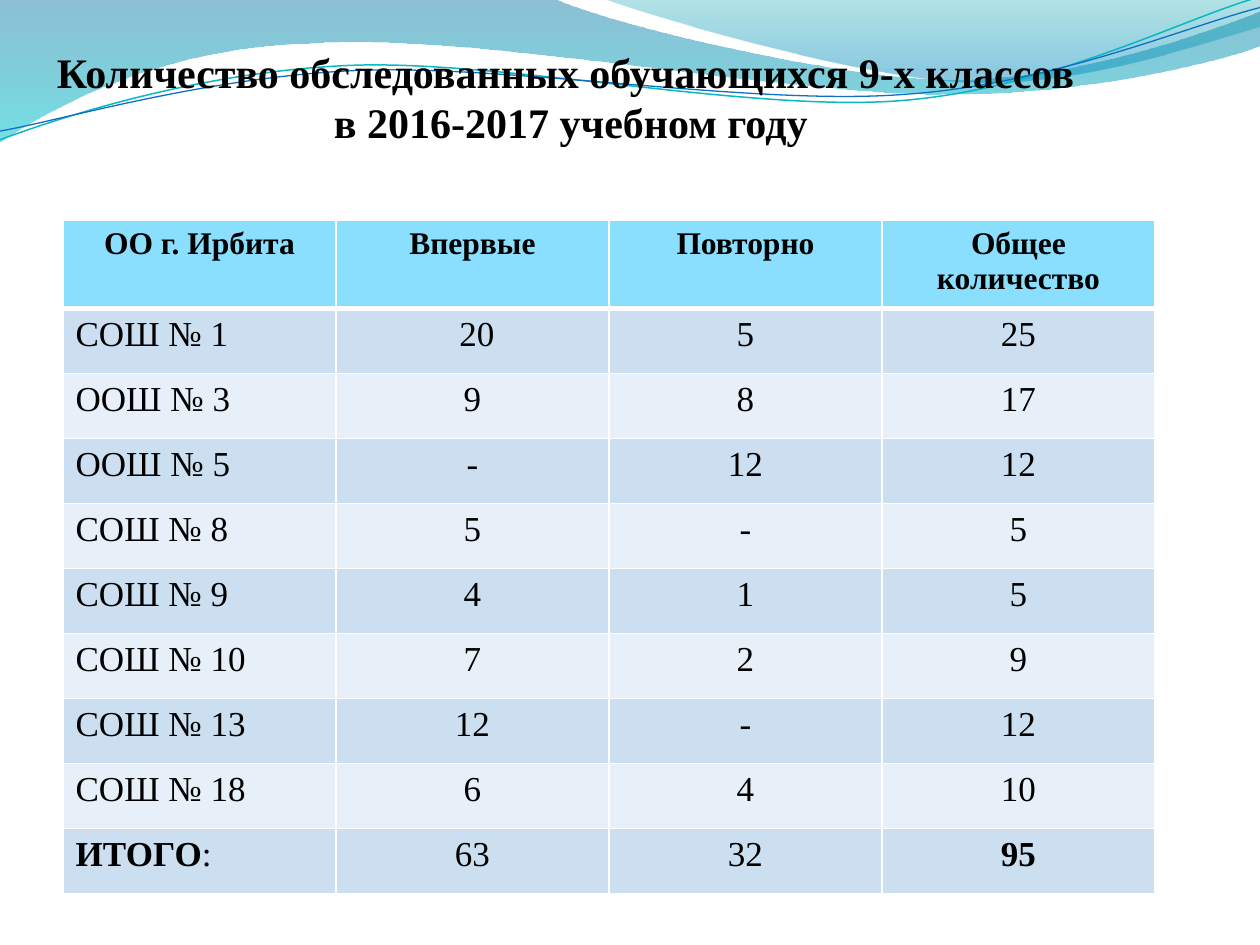
import math

import pptx
import pptx.util
import pptx.dml.color
import pptx.enum.text
import pptx.oxml
import pptx.oxml.ns
import lxml.etree

Pt = pptx.util.Pt
ALIGN = pptx.enum.text.PP_ALIGN
qn = pptx.oxml.ns.qn

HUES = {
    "text": "000000", "edge": "FFFFFF", "head": "8ADFFF",
    "odd": "CCDFF1", "even": "E7EFF8",
    "deep": "0074A1", "aqua": "00C6CF", "teal": "00A1A9", "sky": "008BBF",
    "mint": "0AB8BF", "blue": "0F6FC6",
}


def rgb(name):
    return pptx.dml.color.RGBColor.from_string(HUES[name])


class Deck:
    font = "Times New Roman"

    def __init__(self, wide, high):
        self.file = pptx.Presentation()
        self.file.slide_width, self.file.slide_height = Pt(wide), Pt(high)
        self.slide = self.file.slides.add_slide(self.file.slide_layouts[6])

    def style(self, para, size, bold, align):
        para.alignment = align
        for run in para.runs:
            run.font.name, run.font.size, run.font.bold = self.font, Pt(size), bold
            run.font.color.rgb = rgb("text")

    def form(self, box, start, parts, close, turn=0):
        """Outline of lines (two numbers) and Bezier curves (six numbers)."""
        left, top, wide, high = box
        pen = self.slide.shapes.build_freeform(Pt(left), Pt(top))
        pen.add_line_segments([(Pt(left + wide), Pt(top + high))], close=False)
        shape = pen.convert_to_shape()
        shape.shadow.inherit = False
        shape.rotation = turn
        route = next(shape._element.iter(qn("a:path")))
        for step in list(route):
            route.remove(step)

        # Points are given as seen, so undo the turn about the box centre
        mid_x, mid_y = left + wide / 2, top + high / 2
        cos, sin = math.cos(math.radians(-turn)), math.sin(math.radians(-turn))

        def add(tag, part):
            step = lxml.etree.SubElement(route, qn(tag))
            for x, y in zip(part[::2], part[1::2]):
                x, y = x - mid_x, y - mid_y
                lxml.etree.SubElement(step, qn("a:pt"),
                                      x=str(Pt(wide / 2 + x * cos - y * sin)),
                                      y=str(Pt(high / 2 + x * sin + y * cos)))

        add("a:moveTo", start)
        for part in parts:
            add("a:lnTo" if len(part) == 2 else "a:cubicBezTo", part)
        if close:
            lxml.etree.SubElement(route, qn("a:close"))
        return shape

    def wave(self, box, start, parts, stops):
        """Closed area with a see-through gradient from top to bottom."""
        shape = self.form(box, start, parts, True)
        shape.line.fill.background()
        shape.fill.gradient()
        shape.fill.gradient_angle = 270
        for stop, (place, hue, alpha) in zip(shape.fill.gradient_stops, stops):
            stop.position = place
            stop.color.rgb = rgb(hue)
        marks = shape._element.spPr.iter(qn("a:srgbClr"))
        for mark, (place, hue, alpha) in zip(marks, stops):
            lxml.etree.SubElement(mark, qn("a:alpha"), val=str(alpha * 1000))

    def curve(self, box, start, parts, hue, width):
        shape = self.form(box, start, parts, False, 357.3)
        shape.fill.background()
        shape.line.color.rgb = rgb(hue)
        shape.line.width = Pt(width)

    def title(self, text, left, top, wide, high):
        box = self.slide.shapes.add_textbox(Pt(left), Pt(top), Pt(wide), Pt(high))
        frame = box.text_frame
        frame.word_wrap = True
        frame.vertical_anchor = pptx.enum.text.MSO_ANCHOR.BOTTOM
        frame.margin_left = frame.margin_right = frame.margin_bottom = 0
        frame.margin_top = Pt(3.6)
        frame.text = text
        self.style(frame.paragraphs[0], 24, True, ALIGN.CENTER)

    def edge(self, cell, sides):
        props = cell._tc.get_or_add_tcPr()
        for i, (side, width) in enumerate(sides.items()):
            line = pptx.oxml.parse_xml(
                f'<a:{side} xmlns:a="http://schemas.openxmlformats.org/drawingml/2006/main"'
                f' w="{Pt(width)}"><a:solidFill><a:srgbClr val="{HUES["edge"]}"/>'
                f'</a:solidFill></a:{side}>')
            props.insert(i, line)

    def table(self, rows, left, top, wide, first, other):
        high = first + other * (len(rows) - 1)
        grid = self.slide.shapes.add_table(
            len(rows), len(rows[0]), Pt(left), Pt(top), Pt(wide), Pt(high)).table
        for r, row in enumerate(rows):
            grid.rows[r].height = Pt(other if r else first)
            hue = ("odd" if r % 2 else "even") if r else "head"
            for c, text in enumerate(row):
                cell = grid.cell(r, c)
                cell.fill.solid()
                cell.fill.fore_color.rgb = rgb(hue)
                if r == 0:
                    self.edge(cell, {"lnL": 1, "lnR": 1, "lnT": 1, "lnB": 3})
                cell.text_frame.text = text
                align = ALIGN.LEFT if r and not c else ALIGN.CENTER
                self.style(cell.text_frame.paragraphs[0], 20 if r else 18, r == 0, align)
        return grid


def main():
    deck = Deck(720, 540)

    # Waves along the top
    deck.wave((-0.7, -0.7, 721.4, 82.1), (0, 0), [
        (316.8, -0.7), (342.7, 12.2, 478.1, 45.4, 545.8, 45.4),
        (614.2, 45.4, 689.8, 18.7, 720, 6.5), (720.7, 25.9),
        (707.8, 31.7, 626.4, 54.7, 537.1, 54),
        (447.8, 54, 275, 20.2, 185, 24.5), (92.9, 25.9, 33.1, 59.8, -0.7, 81.4),
        (0, 0),
    ], [(0, "deep", 45), (1, "aqua", 55)])
    deck.wave((344.9, -0.7, 375.1, 50.4), (344.9, -0.7), [
        (366.5, 7.9, 491, 44.6, 553.7, 46.8),
        (616.3, 49.7, 691.9, 23, 720, 15.1), (720, 0), (344.9, -0.7),
    ], [(0, "teal", 30), (0.8, "sky", 45)])

    # Thin lines across the waves
    deck.curve((-1.4, 15.8, 721.4, 51.1), (0, 79.9), [
        (34.6, 67, 113.8, 41, 199.4, 37.4), (284.4, 33.8, 427, 64.1, 513.4, 57.6),
        (599.8, 51.1, 675.4, 10.8, 718.6, -1.4)], "mint", 0.85)
    deck.curve((-1.4, 21.6, 722.2, 41.8), (0, 74.9), [
        (33.8, 69.1, 118.1, 43.9, 203.8, 40.3), (290.2, 36.7, 429.8, 60.5, 516.2, 54),
        (601.9, 48.2, 677.5, 15.1, 720, 4.3)], "blue", 0.75)

    # Title
    deck.title("Количество обследованных обучающихся 9-х классов \v"
               "в 2016-2017 учебном году", 14.4, 15.1, 623.5, 69.1)

    # Counts by school
    grid = deck.table([
        ("ОО г. Ирбита", "Впервые", "Повторно", "Общее количество"),
        ("СОШ № 1", " 20", "5", "25"),
        ("ООШ № 3", "9", "8", "17"),
        ("ООШ № 5", "-", "12", "12"),
        ("СОШ № 8", "5", "-", "5"),
        ("СОШ № 9", "4", "1", "5"),
        ("СОШ № 10", "7", "2", "9"),
        ("СОШ № 13", "12", "-", "12"),
        ("СОШ № 18", "6", "4", "10"),
        ("ИТОГО", "63", "32", "95"),
    ], 36, 126, 624, 48.7, 37.15)

    # Total row: bold label and sum, plain colon
    label, total = (grid.cell(9, c).text_frame.paragraphs[0] for c in (0, 3))
    label.add_run().text = ":"
    deck.style(label, 20, False, ALIGN.LEFT)
    for para in (label, total):
        para.runs[0].font.bold = True

    deck.file.save("out.pptx")


if __name__ == "__main__":
    main()
